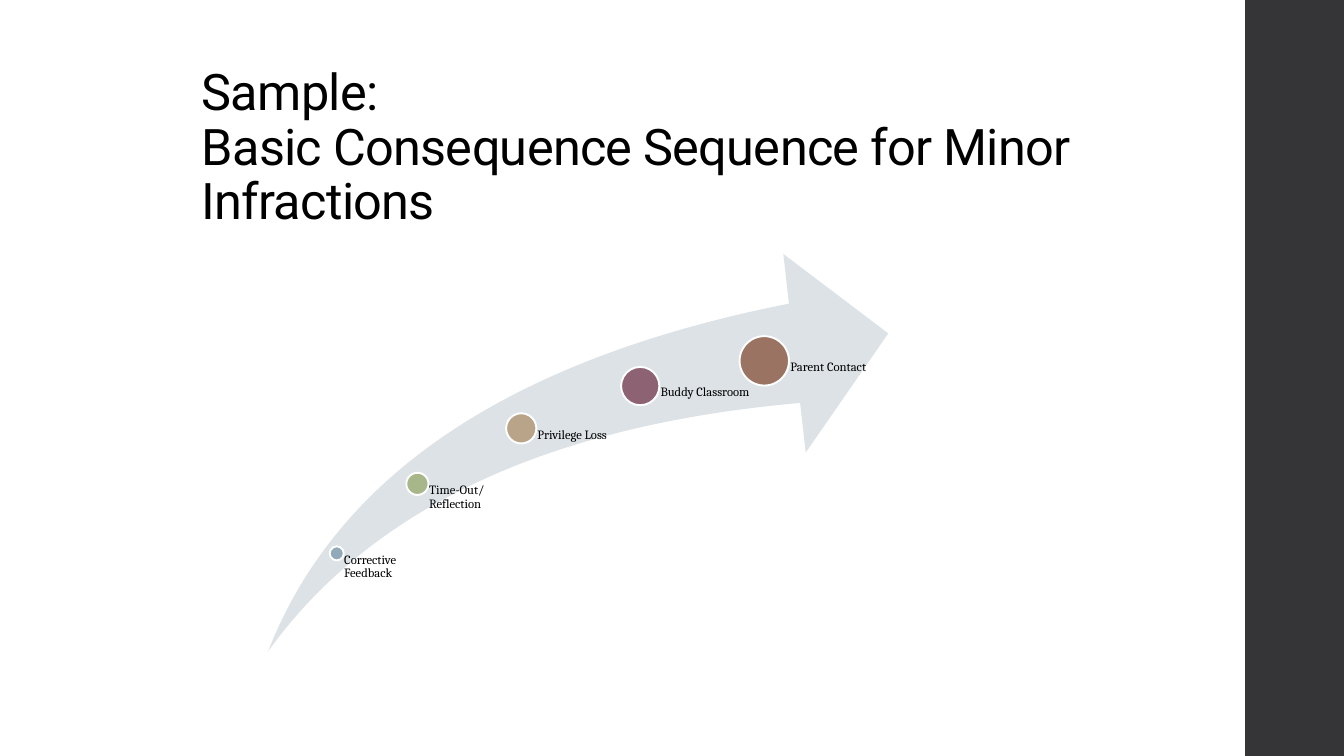
from copy import deepcopy

from pptx import Presentation
from pptx import util as u
from pptx.dml.color import RGBColor
from pptx.enum import shapes, text
from pptx.oxml.ns import qn

COLORS = {
    "ink": "000000",
    "white": "FFFFFF",
    "bar": "353537",
    "arrow": "DCE2E6",
    "blue": "92A9B9",
    "green": "A7B789",
    "tan": "B9A489",
    "plum": "8D6374",
    "brown": "9B7362",
}
TITLE = "Sample:\vBasic Consequence Sequence for Minor Infractions"
TITLE_FONT = {"name": "Roboto", "size": u.Pt(36)}
LABEL_FONT = {"name": "Cambria", "size": u.Pt(9)}
LABEL_BOTTOM = 6.41
INSET_PER_DIAMETER = 0.53
STEPS = [
    ("Corrective Feedback", "blue", 3.34, 5.49, 0.14, 0.81),
    ("Time-Out/Reflection", "green", 4.14, 4.8, 0.22, 1.02),
    ("Privilege Loss", "tan", 5.17, 4.25, 0.3, 1.19),
    ("Buddy Classroom", "plum", 6.35, 3.83, 0.38, 1.23),
    ("Parent Contact", "brown", 7.58, 3.58, 0.49, 1.23),
]


def apply(target, values):
    """Set each named attribute on the target."""
    for name, value in values.items():
        setattr(target, name, value)


def place(left, top, width, height):
    """Return a position and size given in inches."""
    return [u.Inches(value) for value in (left, top, width, height)]


def rgb(name):
    """Look up a named colour."""
    return RGBColor.from_string(COLORS[name])


def style_text(frame, font):
    """Format every paragraph and run in a text frame."""
    for para in frame.paragraphs:
        apply(para, {"line_spacing": 0.9, "alignment": text.PP_ALIGN.LEFT})
        for span in para.runs:
            apply(span.font, font)
            span.font.color.rgb = rgb("ink")


def add_title(page):
    """Move, fill and format the title placeholder."""
    title = page.shapes.title
    box = dict(zip(("left", "top", "width", "height"), place(1.9, 0.58, 9.1, 1.76)))
    apply(title, box)
    frame = title.text_frame
    apply(frame, {
        "text": TITLE,
        "word_wrap": True,
        "auto_size": text.MSO_AUTO_SIZE.NONE,
        "vertical_anchor": text.MSO_ANCHOR.BOTTOM,
    })
    style_text(frame, TITLE_FONT)
    para = frame.paragraphs[0]
    for span in para.runs:
        span.font._element.set("spc", "-50")
    for line_break in para._p.findall(qn("a:br")):
        line_break.append(deepcopy(para.runs[0].font._element))


def add_filled(page, kind, box, color, outline=None):
    """Add a flat preset shape with an optional outline colour."""
    shape = page.shapes.add_shape(kind, *place(*box))
    shape.shadow.inherit = False
    shape.fill.solid()
    shape.fill.fore_color.rgb = rgb(color)
    if outline:
        shape.line.color.rgb = rgb(outline)
        shape.line.width = u.Pt(1.35)
    else:
        shape.line.fill.background()
    return shape


def add_step(page, label, color, center_x, center_y, diameter, width):
    """Add a dot and the label that hangs from its centre."""
    radius = diameter / 2
    dot = (center_x - radius, center_y - radius, diameter, diameter)
    add_filled(page, shapes.MSO_SHAPE.OVAL, dot, color, "white")
    area = place(center_x, center_y, width, LABEL_BOTTOM - center_y)
    frame = page.shapes.add_textbox(*area).text_frame
    apply(frame, {
        "text": label,
        "word_wrap": True,
        "margin_left": u.Inches(diameter * INSET_PER_DIAMETER),
        "margin_top": 0,
        "margin_right": 0,
        "margin_bottom": 0,
    })
    style_text(frame, LABEL_FONT)


def main():
    """Build and save the consequence sequence slide."""
    deck = Presentation()
    apply(deck, {"slide_width": u.Inches(13.33), "slide_height": u.Inches(7.5)})
    page = deck.slides.add_slide(deck.slide_layouts[5])
    add_filled(page, shapes.MSO_SHAPE.RECTANGLE, (12.35, 0, 0.98, 7.5), "bar")
    add_title(page)
    swoosh = add_filled(page, shapes.MSO_SHAPE.SWOOSH_ARROW, (2.66, 2.52, 6.15, 3.94), "arrow")
    swoosh.adjustments[0] = 0.25
    swoosh.adjustments[1] = 0.25
    for step in STEPS:
        add_step(page, *step)
    deck.save("out.pptx")


if __name__ == "__main__":
    main()
